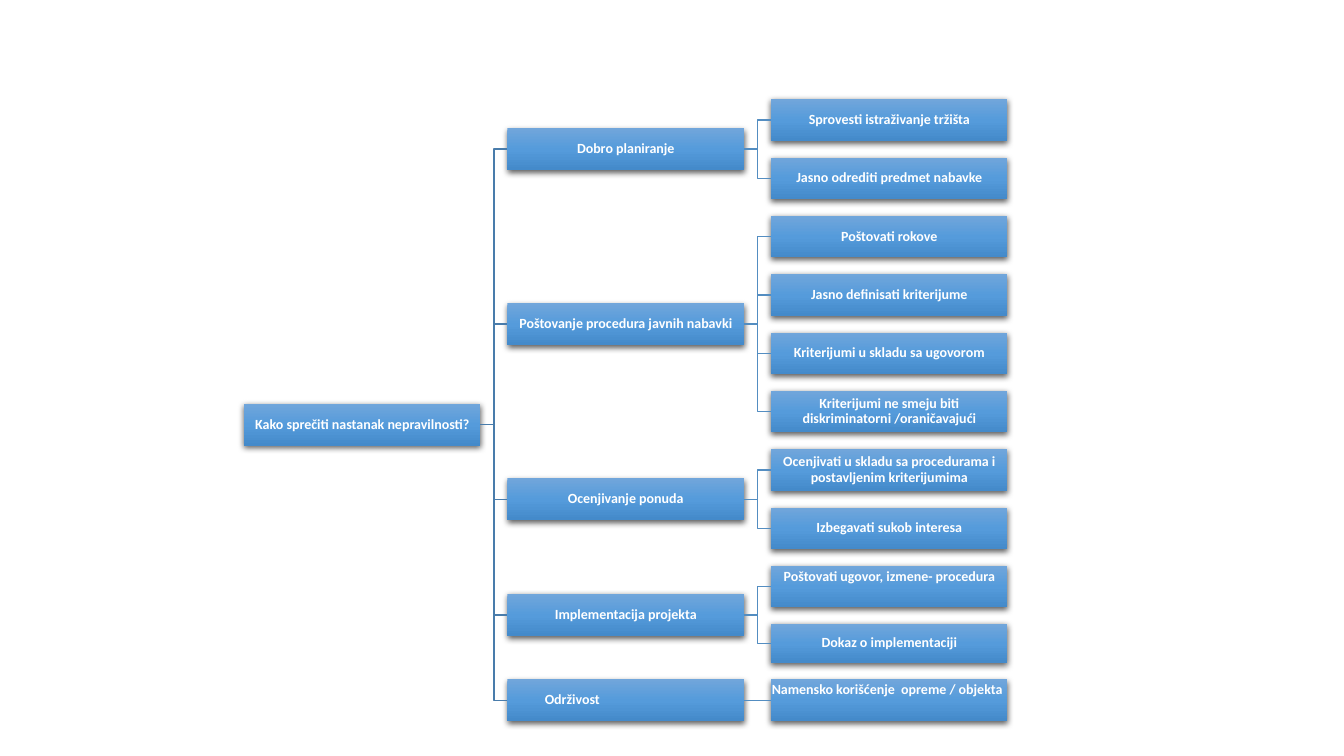
import copy
from dataclasses import dataclass

import pptx
import pptx.dml.color
import pptx.enum.shapes
import pptx.enum.text
import pptx.oxml
import pptx.oxml.ns
import pptx.util

Cm = pptx.util.Cm
RGB = pptx.dml.color.RGBColor.from_string
ALIGN = pptx.enum.text.PP_ALIGN
ANCHOR = pptx.enum.text.MSO_ANCHOR
CONNECTOR = pptx.enum.shapes.MSO_CONNECTOR


@dataclass(frozen=True)
class Theme:
    """Colours and type of the tree."""
    font: str = "Calibri"
    size: float = 10
    text: str = "FFFFFF"
    gradient: tuple = ((0, "71A6DB"), (0.5, "559BDB"), (1, "448ACA"))
    shadow: str = "000000"
    root_line: str = "497CAB"
    branch_line: str = "538DC1"
    line_width: float = 1


THEME = Theme()

COLUMNS = [6.15, 12.79, 19.43]
BOX_W, BOX_H, LOW_H = 5.96, 1.05, 0.97
TOP, GAP = 2.5, 0.42
INSET = 0.02

ROOT = "Kako sprečiti nastanak nepravilnosti?"
TREE = {
    "Dobro planiranje": [
        "Sprovesti istraživanje tržišta",
        "Jasno odrediti predmet nabavke",
    ],
    "Poštovanje procedura javnih nabavki": [
        "Poštovati rokove",
        "Jasno definisati kriterijume",
        "Kriterijumi u skladu sa ugovorom",
        "Kriterijumi ne smeju biti diskriminatorni /oraničavajući",
    ],
    "Ocenjivanje ponuda": [
        "Ocenjivati u skladu sa procedurama i postavljenim kriterijumima",
        "Izbegavati sukob interesa",
    ],
    "Implementacija projekta": [
        "Poštovati ugovor, izmene- procedura",
        "Dokaz o implementaciji",
    ],
    "Održivost": ["Namensko korišćenje  opreme / objekta"],
}
LOW_BOX = "Dokaz o implementaciji"
HIGH_TEXT = {"vertical_anchor": ANCHOR.TOP, "margin_top": Cm(0.08)}
FRAME_FORMATS = {
    "Poštovati ugovor, izmene- procedura": HIGH_TEXT,
    "Namensko korišćenje  opreme / objekta": HIGH_TEXT,
    "Održivost": {"margin_left": Cm(0.94)},
}
LEFT_ALIGNED = {"Održivost", "Namensko korišćenje  opreme / objekta"}


def apply(target, formats):
    """Set each named attribute on the target."""
    for name, value in formats.items():
        setattr(target, name, value)


def add_gradient(sp):
    """Fill the shape with the theme gradient, from top to bottom."""
    sp.fill.gradient()
    sp.fill.gradient_angle = 270
    stops = sp._element.spPr.find(".//" + pptx.oxml.ns.qn("a:gsLst"))
    stops.append(copy.deepcopy(stops[0]))
    for stop, (position, color) in zip(sp.fill.gradient_stops, THEME.gradient):
        stop.position = position
        stop.color.rgb = RGB(color)


def add_shadow(sp):
    """Give the shape a soft shadow below it."""
    sp.shadow.inherit = False
    effects = sp._element.spPr.find(pptx.oxml.ns.qn("a:effectLst"))
    effects.append(pptx.oxml.parse_xml(
        f'<a:outerShdw {pptx.oxml.ns.nsdecls("a")} blurRad="57150" dist="19050" '
        'dir="5400000" algn="ctr" rotWithShape="0">'
        f'<a:srgbClr val="{THEME.shadow}"><a:alpha val="63000"/></a:srgbClr>'
        '</a:outerShdw>'))


def add_box(s, text, left, center, height=BOX_H):
    """Add a tree box centred on the given height."""
    sp = s.shapes.add_shape(
        pptx.enum.shapes.MSO_SHAPE.RECTANGLE,
        Cm(left), Cm(center - height / 2), Cm(BOX_W), Cm(height))
    add_gradient(sp)
    sp.line.fill.background()
    add_shadow(sp)
    tf = sp.text_frame
    margins = {f"margin_{side}": Cm(INSET) for side in ("left", "top", "right", "bottom")}
    apply(tf, {"word_wrap": True, "vertical_anchor": ANCHOR.MIDDLE, **margins,
               **FRAME_FORMATS.get(text, {})})
    p = tf.paragraphs[0]
    apply(p, {"alignment": ALIGN.LEFT if text in LEFT_ALIGNED else ALIGN.CENTER,
              "line_spacing": 0.9, "space_after": pptx.util.Pt(3.5)})
    r = p.add_run()
    r.text = text
    apply(r.font, {"name": THEME.font, "size": pptx.util.Pt(THEME.size), "bold": True})
    r.font.color.rgb = RGB(THEME.text)
    return sp


def add_link(s, parent, child, color):
    """Join the right side of the parent to the left side of the child."""
    kind = CONNECTOR.STRAIGHT if parent.top == child.top else CONNECTOR.ELBOW
    link = s.shapes.add_connector(kind, 0, 0, 0, 0)
    link.begin_connect(parent, 3)
    link.end_connect(child, 1)
    apply(link.line, {"width": pptx.util.Pt(THEME.line_width)})
    link.line.color.rgb = RGB(color)
    link._element.spPr.append(
        pptx.oxml.parse_xml(f'<a:effectLst {pptx.oxml.ns.nsdecls("a")}/>'))


def add_tree(s):
    """Stack the leaves and centre each parent on its children."""
    top = TOP
    branches, branch_centers = [], []
    for branch_text, leaf_texts in TREE.items():
        leaves, centers = [], []
        for text in leaf_texts:
            height = LOW_H if text == LOW_BOX else BOX_H
            centers.append(top + height / 2)
            leaves.append(add_box(s, text, COLUMNS[2], centers[-1], height))
            top += height + GAP
        branch_centers.append((centers[0] + centers[-1]) / 2)
        branch = add_box(s, branch_text, COLUMNS[1], branch_centers[-1])
        branches.append(branch)
        for leaf in leaves:
            add_link(s, branch, leaf, THEME.branch_line)
    root = add_box(s, ROOT, COLUMNS[0], (branch_centers[0] + branch_centers[-1]) / 2)
    for branch in branches:
        add_link(s, root, branch, THEME.root_line)


def main():
    """Build the slide and save it."""
    prs = pptx.Presentation()
    apply(prs, {"slide_width": Cm(33.87), "slide_height": Cm(19.05)})
    s = prs.slides.add_slide(prs.slide_layouts[6])
    add_tree(s)
    prs.save("out.pptx")


if __name__ == "__main__":
    main()
